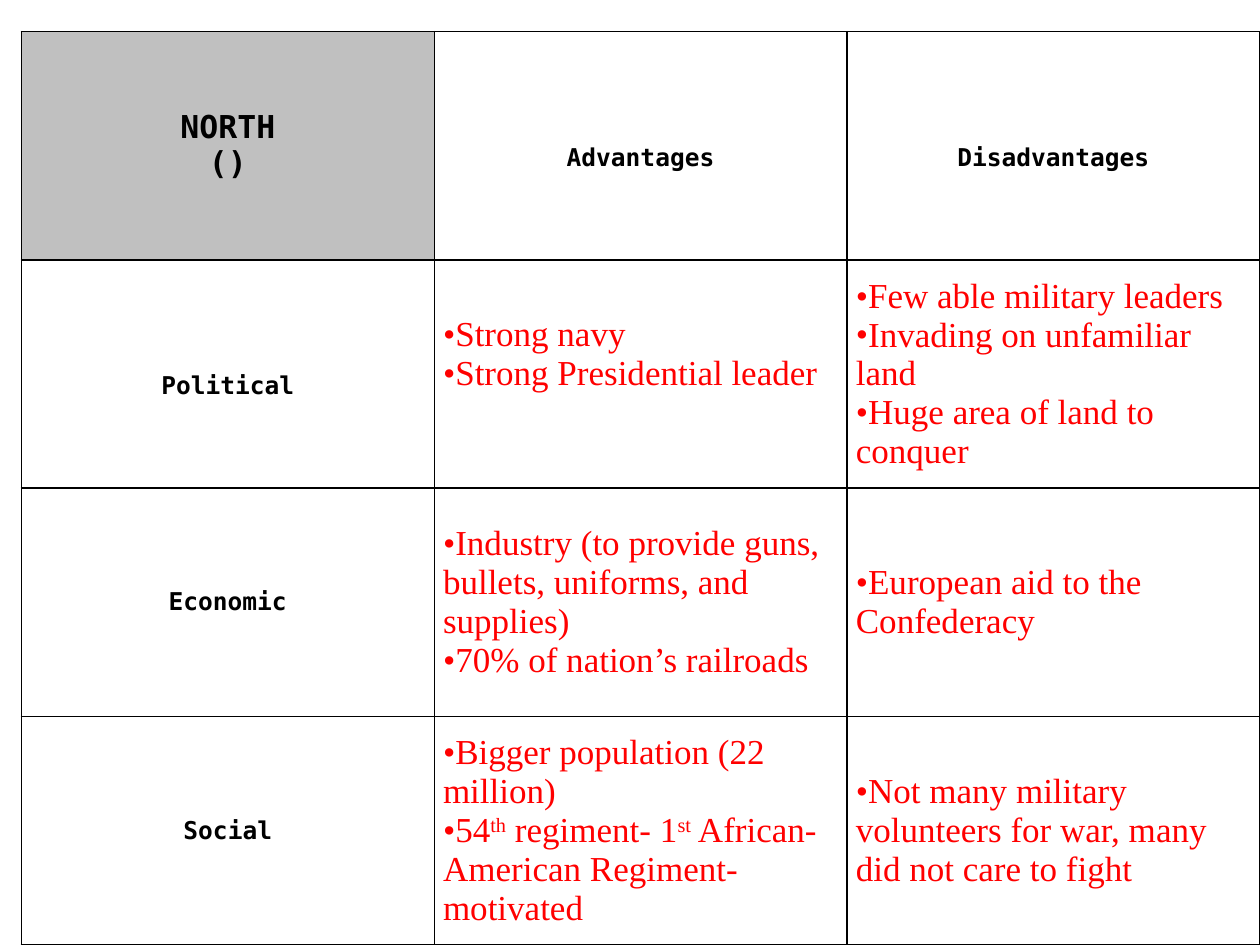
"""Build a slide with a table of the North's advantages and disadvantages."""
from lxml import etree
from pptx import Presentation
from pptx.dml.color import RGBColor
from pptx.enum.text import MSO_ANCHOR, PP_ALIGN
from pptx.oxml.ns import qn
from pptx.util import Inches, Pt

MIDDLE = MSO_ANCHOR.MIDDLE
CENTER = PP_ALIGN.CENTER
LEFT = PP_ALIGN.LEFT
MONO = "DejaVu Sans Mono"
SERIF = "Times New Roman"
BLACK, RED, GRAY = "000000", "FF0000", "C0C0C0"
WIDE, HIGH = 10, 7.5
X, Y = 0.17, 0.25
DROP, LIFT = 0.19, 0.31

HEADS = ["Advantages", "Disadvantages"]
ROWS = [
    ("Political", DROP,
     (["Strong navy", "Strong Presidential leader"], LIFT),
     (["Few able military leaders", "Invading on unfamiliar land",
       "Huge area of land to conquer"], 0)),
    ("Economic", 0,
     (["Industry (to provide guns, bullets, uniforms, and supplies)",
       "70% of nation’s railroads"], 0),
     (["European aid to the Confederacy"], 0)),
    ("Social", 0,
     (["Bigger population (22 million)",
       "54^th^ regiment- 1^st^ African-American Regiment- motivated"], 0),
     (["Not many military volunteers for war, many did not care to fight"],
      0)),
]


def color(code):
    """Turn a hex string into a colour."""
    return RGBColor.from_string(code)


def border(cell):
    """Draw a thin black line on each side of a cell."""
    props = cell._tc.get_or_add_tcPr()
    for side in ("a:lnL", "a:lnR", "a:lnT", "a:lnB"):
        line = etree.SubElement(props, qn(side), w=str(Pt(1)))
        fill = etree.SubElement(line, qn("a:solidFill"))
        etree.SubElement(fill, qn("a:srgbClr"), val=BLACK)


def frame(cell, shade=None, top=0, base=0):
    """Set the lines, fill, margins and anchor of a cell."""
    border(cell)
    if shade:
        cell.fill.solid()
        cell.fill.fore_color.rgb = color(shade)
    else:
        cell.fill.background()
    cell.margin_left = cell.margin_right = Inches(0.07)
    cell.margin_top, cell.margin_bottom = Inches(top), Inches(base)
    cell.vertical_anchor = MIDDLE


def bullet(para):
    """Give a paragraph a round serif bullet without an indent."""
    props = para._p.get_or_add_pPr()
    props.set("marL", "0")
    props.set("indent", "0")
    etree.SubElement(props, qn("a:buFont"), typeface=SERIF)
    etree.SubElement(props, qn("a:buChar"), char="•")


def write(para, text, size, face, ink, bold):
    """Add runs to a paragraph, raising the parts between carets."""
    for num, part in enumerate(text.split("^")):
        run = para.add_run()
        run.text = part
        font = run.font
        font.size, font.name, font.bold = Pt(size), face, bold
        font.color.rgb = color(ink)
        if num % 2:
            run._r.get_or_add_rPr().set("baseline", "30000")


def lines(cell, texts):
    """Yield one paragraph of a cell for each text."""
    body = cell.text_frame
    for num, text in enumerate(texts):
        yield (body.add_paragraph() if num else body.paragraphs[0]), text


def label(cell, texts, size=14, shade=None, top=0):
    """Fill a cell with centred bold labels."""
    frame(cell, shade, top)
    for para, text in lines(cell, texts):
        para.alignment = CENTER
        write(para, text, size, MONO, BLACK, True)


def points(cell, texts, base):
    """Fill a cell with red bullet points."""
    frame(cell, base=base)
    for para, text in lines(cell, texts):
        para.alignment = LEFT
        bullet(para)
        write(para, text, 20, SERIF, RED, False)


def grid(slide, rows, cols):
    """Add a plain table that runs to the slide's right and bottom edges."""
    table = slide.shapes.add_table(
        rows, cols, Inches(X), Inches(Y),
        Inches(WIDE - X), Inches(HIGH - Y)).table
    table.first_row = table.horz_banding = False
    return table


def main():
    """Build the slide and save it."""
    deck = Presentation()
    deck.slide_width, deck.slide_height = Inches(WIDE), Inches(HIGH)
    slide = deck.slides.add_slide(deck.slide_layouts[6])
    table = grid(slide, len(ROWS) + 1, len(HEADS) + 1)
    label(table.cell(0, 0), ["NORTH", "()"], 18, GRAY)
    for col, head in enumerate(HEADS, 1):
        label(table.cell(0, col), [head], top=DROP)
    for row, (name, top, *lists) in enumerate(ROWS, 1):
        label(table.cell(row, 0), [name], top=top)
        for col, (texts, base) in enumerate(lists, 1):
            points(table.cell(row, col), texts, base)
    deck.save("out.pptx")


if __name__ == "__main__":
    main()
